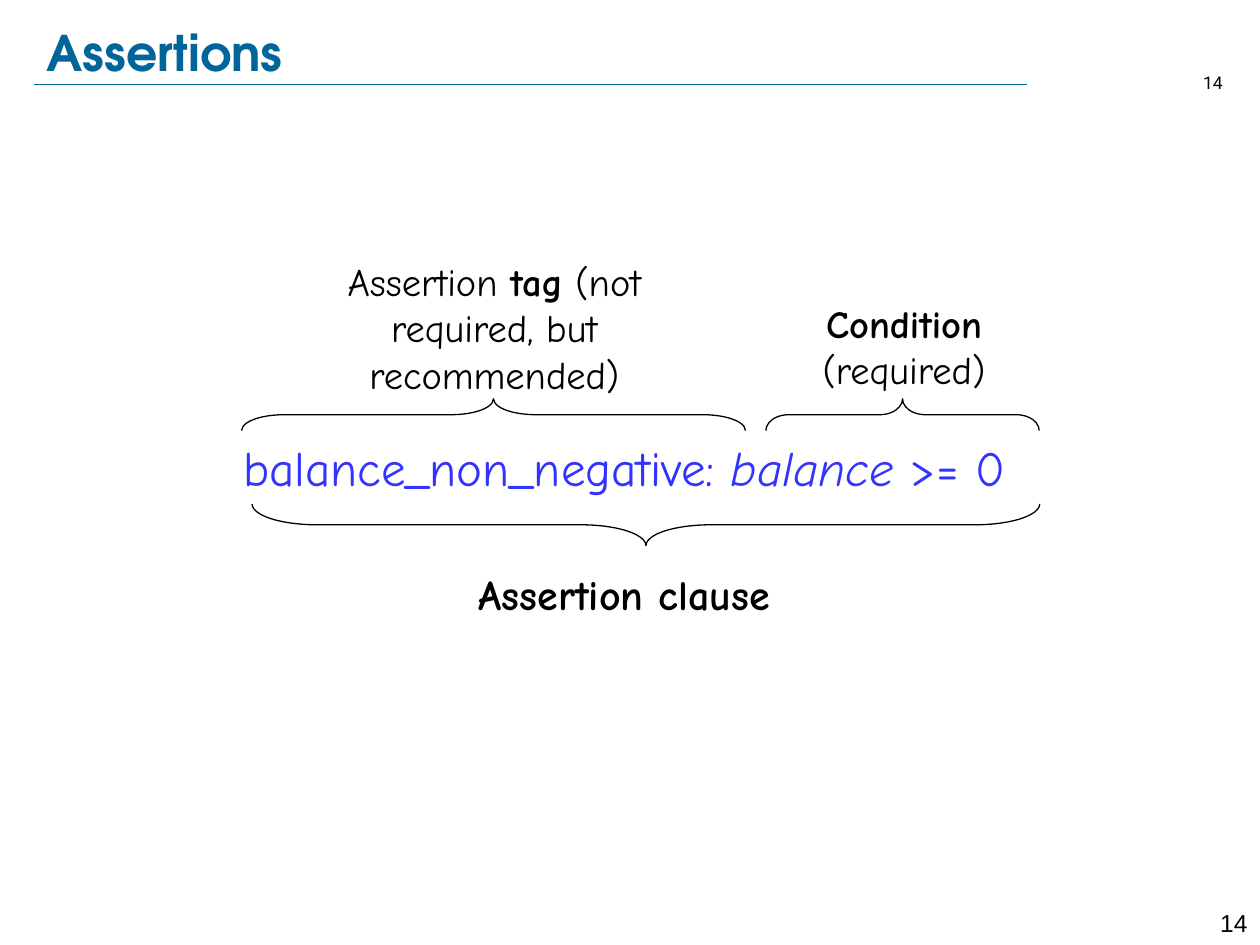
from dataclasses import dataclass

from lxml import etree
from pptx import Presentation
from pptx import util as u
from pptx.dml.color import RGBColor
from pptx.enum import shapes, text
from pptx.oxml.ns import qn


@dataclass(frozen=True)
class Theme:
    accent: str = "006699"
    code: str = "3333FF"
    ink: str = "000000"
    title_font: str = "TeX Gyre Adventor"
    body_font: str = "Comic Neue"
    title_size: int = 28
    code_size: int = 28
    clause_size: int = 24
    label_size: int = 22
    footer_size: int = 14
    number_size: int = 10


class Deck:
    def __init__(self, prs, theme):
        self.prs, self.theme = prs, theme
        self.s = None

    def new_slide(self):
        self.s = self.prs.slides.add_slide(self.prs.slide_layouts[5])

    def fill_text(self, sp, runs, fmt, align, anchor):
        """Fill a shape with one paragraph; runs are (text, own format) pairs."""
        tf = sp.text_frame
        tf.word_wrap = True
        tf.auto_size = text.MSO_AUTO_SIZE.NONE
        tf.vertical_anchor = anchor
        p = tf.paragraphs[0]
        p.alignment = align
        for words, own in runs:
            r = p.add_run()
            r.text = words
            values = {**fmt, **own}
            r.font.color.rgb = RGBColor.from_string(values.pop("color"))
            r.font.size = u.Pt(values.pop("size"))
            for name, value in values.items():
                setattr(r.font, name, value)

    def title(self, words, box):
        sp = self.s.shapes.title
        sp.left, sp.top, sp.width, sp.height = map(u.Cm, box)
        t = self.theme
        fmt = dict(name=t.title_font, size=t.title_size, color=t.accent, bold=True)
        self.fill_text(sp, [(words, {})], fmt, text.PP_ALIGN.LEFT, text.MSO_ANCHOR.MIDDLE)

    def text(self, runs, box, size, align=text.PP_ALIGN.LEFT, **fmt):
        sp = self.s.shapes.add_textbox(*map(u.Cm, box))
        base = dict(name=self.theme.body_font, size=size, color=self.theme.ink)
        self.fill_text(sp, runs, {**base, **fmt}, align, text.MSO_ANCHOR.TOP)

    def rule(self, x1, x2, y):
        ln = self.s.shapes.add_connector(
            shapes.MSO_CONNECTOR.STRAIGHT, u.Cm(x1), u.Cm(y), u.Cm(x2), u.Cm(y))
        ln.line.color.rgb = RGBColor.from_string(self.theme.accent)
        ln.line.width = u.Pt(0.25)
        etree.SubElement(ln._element.spPr, qn("a:effectLst"))

    def brace(self, x, y, length, depth, curl, rotation):
        """Lay a brace flat in the box at x, y; rotation 90 points down, 270 up."""
        left = x + (length - depth) / 2
        top = y - (length - depth) / 2
        sp = self.s.shapes.add_shape(
            shapes.MSO_SHAPE.RIGHT_BRACE, *map(u.Cm, (left, top, depth, length)))
        sp.rotation = rotation
        sp.adjustments[0] = curl
        sp.adjustments[1] = 0.5
        sp.shadow.inherit = False
        sp.fill.background()
        sp.line.color.rgb = RGBColor.from_string(self.theme.ink)
        sp.line.width = u.Pt(0.75)


def main():
    prs = Presentation()
    prs.slide_width, prs.slide_height = u.Cm(25.4), u.Cm(19.05)
    t = Theme()
    d = Deck(prs, t)
    d.new_slide()
    center, right = text.PP_ALIGN.CENTER, text.PP_ALIGN.RIGHT
    bold, italic = {"bold": True}, {"italic": True}

    d.rule(0.69, 20.7, 1.7)
    d.text([("14", {})], (24, 18.19, 1.4, 0.61), t.footer_size, right, name="Arial")
    d.text([("14", {})], (23.5, 1.32, 1.4, 0.61), t.number_size, right, name="Roboto")
    d.title("Assertions", (0.69, 0.33, 22.56, 1.45))

    d.text([("balance_non_negative: ", {}), ("balance", italic), (" >= 0", {})],
           (4.65, 8.69, 16.84, 1.45), t.code_size, color=t.code)
    d.brace(5.08, 10.16, 15.88, 0.84, 1.56, 90)
    d.text([("Assertion clause", bold)], (9.4, 11.33, 7.24, 1.3), t.clause_size)

    d.brace(4.87, 8.04, 10.16, 0.64, 1.33, 270)
    d.text([("Assertion ", {}), ("tag", bold), (" (not required, but recommended)", {})],
           (6.22, 5.08, 7.49, 3.07), t.label_size, center)
    d.brace(15.44, 8.04, 5.51, 0.64, 0.72, 270)
    d.text([("Condition", bold), (" (required)", {})],
           (16, 5.92, 4.45, 2.13), t.label_size, center)

    prs.save("out.pptx")


if __name__ == "__main__":
    main()
